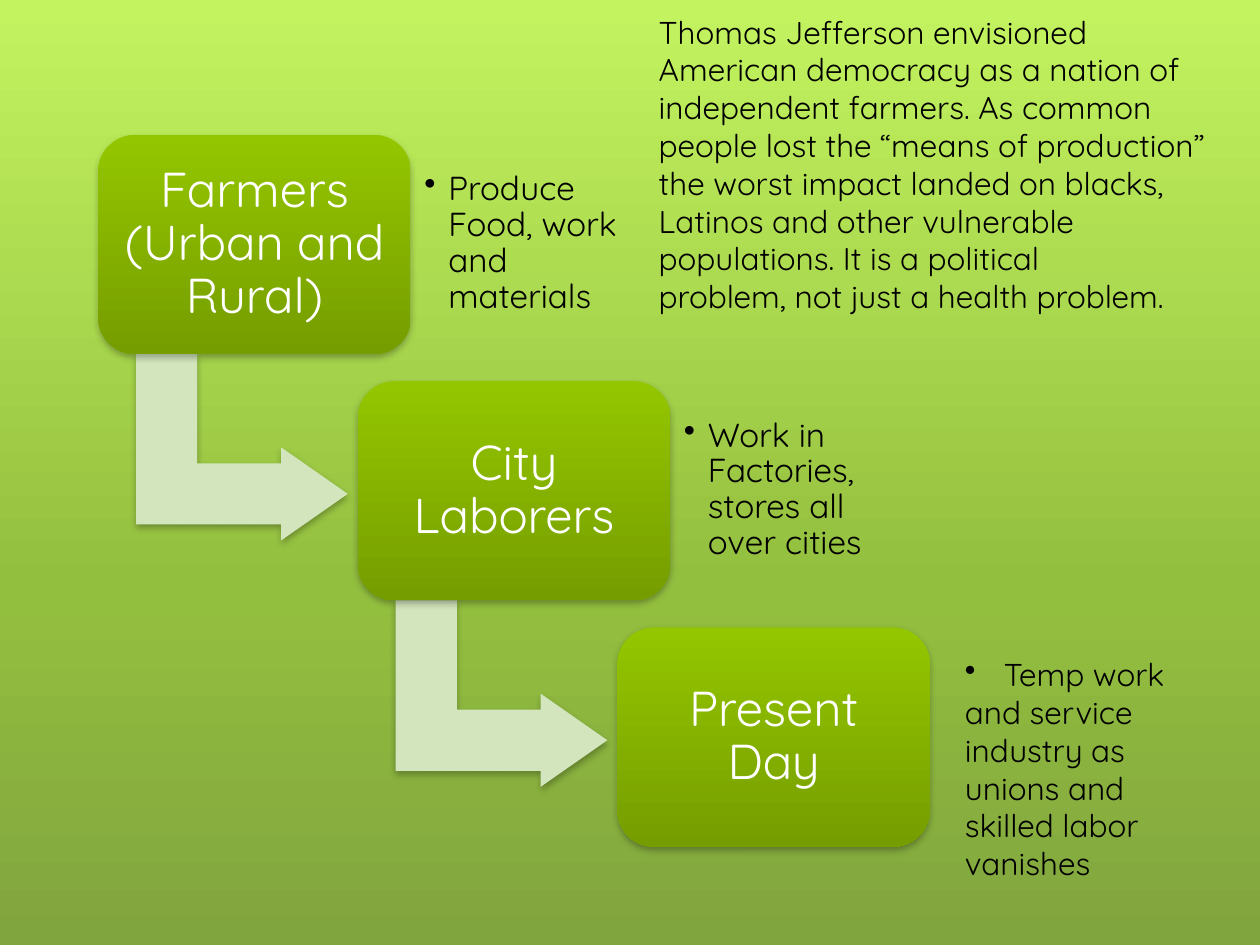
from copy import deepcopy

from lxml.etree import SubElement
from pptx import Presentation
from pptx.dml.color import RGBColor
from pptx.enum.shapes import MSO_SHAPE
from pptx.enum.text import MSO_ANCHOR, MSO_AUTO_SIZE, PP_ALIGN
from pptx.oxml.ns import qn
from pptx.util import Inches, Pt

BLACK = RGBColor(0x00, 0x00, 0x00)
WHITE = RGBColor(0xFF, 0xFF, 0xFF)
PALE_GREEN = RGBColor(0xD2, 0xE5, 0xBD)
CARD_STOPS = [(0, RGBColor(0x94, 0xC6, 0x00)), (1, RGBColor(0x76, 0x9D, 0x00))]
SKY_STOPS = [
    (0, RGBColor(0xC3, 0xF3, 0x5F)),
    (0.62, RGBColor(0x93, 0xBF, 0x3F)),
    (1, RGBColor(0x81, 0xA5, 0x3E)),
]

STEPS = [
    ("Farmers (Urban and Rural)", "Produce Food, work and materials"),
    ("City Laborers", "Work in Factories, stores all over cities"),
    ("Present Day", None),
]
JEFFERSON = [
    "Thomas Jefferson envisioned",
    "American democracy as a nation of independent farmers. As common people "
    "lost the “means of production” the worst impact landed on blacks, Latinos "
    "and other vulnerable populations. It is a political",
    "problem, not just a health problem.",
]
TEMP_WORK = ["Temp work", "and service industry as unions and skilled labor vanishes"]


class StaircaseSlide:
    """Holds the style and the slide, laid out on 100 columns by 75 rows."""

    font = "Quicksand"
    columns, rows = 100, 75

    def __init__(self, deck):
        self.deck = deck
        self.page = deck.slides.add_slide(deck.slide_layouts[6])
        self.paint_gradient(self.page.background.fill, SKY_STOPS)

    def place(self, left, top, width, height):
        column = self.deck.slide_width / self.columns
        row = self.deck.slide_height / self.rows
        return round(left * column), round(top * row), round(width * column), round(height * row)

    def paint_gradient(self, fill, stops):
        fill.gradient()
        fill.gradient_angle = 270
        stop_list = fill.gradient_stops[0]._gs.getparent()
        while len(stop_list) < len(stops):
            stop_list.append(deepcopy(stop_list[-1]))
        for stop, (position, color) in zip(fill.gradient_stops, stops):
            stop.position = position
            stop.color.rgb = color

    def shape(self, kind, area, adjustments):
        shape = self.page.shapes.add_shape(kind, *self.place(*area))
        for index, value in enumerate(adjustments):
            shape.adjustments[index] = value
        shape.line.fill.background()
        shape.shadow.inherit = False
        effects = shape._element.spPr.find(qn("a:effectLst"))
        shadow = SubElement(effects, qn("a:outerShdw"), blurRad=str(Pt(4)),
                            dist=str(Pt(2)), dir="5400000", rotWithShape="0")
        color = SubElement(shadow, qn("a:srgbClr"), val=str(BLACK))
        SubElement(color, qn("a:alpha"), val="28000")
        return shape

    def frame(self, shape, inset=None, anchor=MSO_ANCHOR.TOP):
        frame = shape.text_frame
        frame.word_wrap = True
        frame.vertical_anchor = anchor
        if inset:
            frame.margin_left = frame.margin_right = Inches(inset)
            frame.margin_top = frame.margin_bottom = Inches(inset)
        return frame

    def add_text(self, para, text, size, color=BLACK):
        span = para.add_run()
        span.text = text
        span.font.name = self.font
        span.font.size = Pt(size)
        span.font.color.rgb = color

    def bullet(self, para, indent):
        properties = para._p.get_or_add_pPr()
        properties.set("marL", str(Inches(indent)))
        properties.set("indent", str(-Inches(indent)))
        SubElement(properties, qn("a:buChar"), char="•")

    def arrow(self, left, top):
        arrow = self.shape(MSO_SHAPE.BENT_UP_ARROW, (left, top, 14.8, 16.8), (0.328, 0.25, 0.358))
        arrow.rotation = 90
        arrow.fill.solid()
        arrow.fill.fore_color.rgb = PALE_GREEN

    def card(self, left, top, title):
        card = self.shape(MSO_SHAPE.ROUNDED_RECTANGLE, (left, top, 24.8, 17.4), (0.167,))
        self.paint_gradient(card.fill, CARD_STOPS)
        para = self.frame(card, 0.12, MSO_ANCHOR.MIDDLE).paragraphs[0]
        para.alignment = PP_ALIGN.CENTER
        para.line_spacing = 0.9
        self.add_text(para, title, 28, WHITE)

    def label(self, left, top, text):
        box = self.page.shapes.add_textbox(*self.place(left, top, 18.1, 14))
        para = self.frame(box, 0.1, MSO_ANCHOR.MIDDLE).paragraphs[0]
        para.level = 1
        self.bullet(para, 0.19)
        para.line_spacing = 0.9
        self.add_text(para, text, 19)

    def note(self, area, lines, bulleted=False):
        box = self.page.shapes.add_textbox(*self.place(*area))
        frame = self.frame(box)
        frame.auto_size = MSO_AUTO_SIZE.SHAPE_TO_FIT_TEXT
        for index, line in enumerate(lines):
            para = frame.add_paragraph() if index else frame.paragraphs[0]
            if bulleted and index == 0:
                self.bullet(para, 0.31)
            self.add_text(para, line, 18)


def main():
    deck = Presentation()
    deck.slide_width, deck.slide_height = Inches(10), Inches(7.5)
    slide = StaircaseSlide(deck)
    for index, (title, work) in enumerate(STEPS):
        left, top = 7.8 + 20.6 * index, 10.7 + 19.55 * index
        if work:
            slide.arrow(left + 4, top + 16.4)
        slide.card(left, top, title)
        if work:
            slide.label(left + 24.9, top + 1.65, work)
    slide.note((51.3, 0.5, 48.7, 25.2), JEFFERSON)
    slide.note((75.6, 51.5, 19.3, 19.2), TEMP_WORK, bulleted=True)
    deck.save("out.pptx")


if __name__ == "__main__":
    main()
